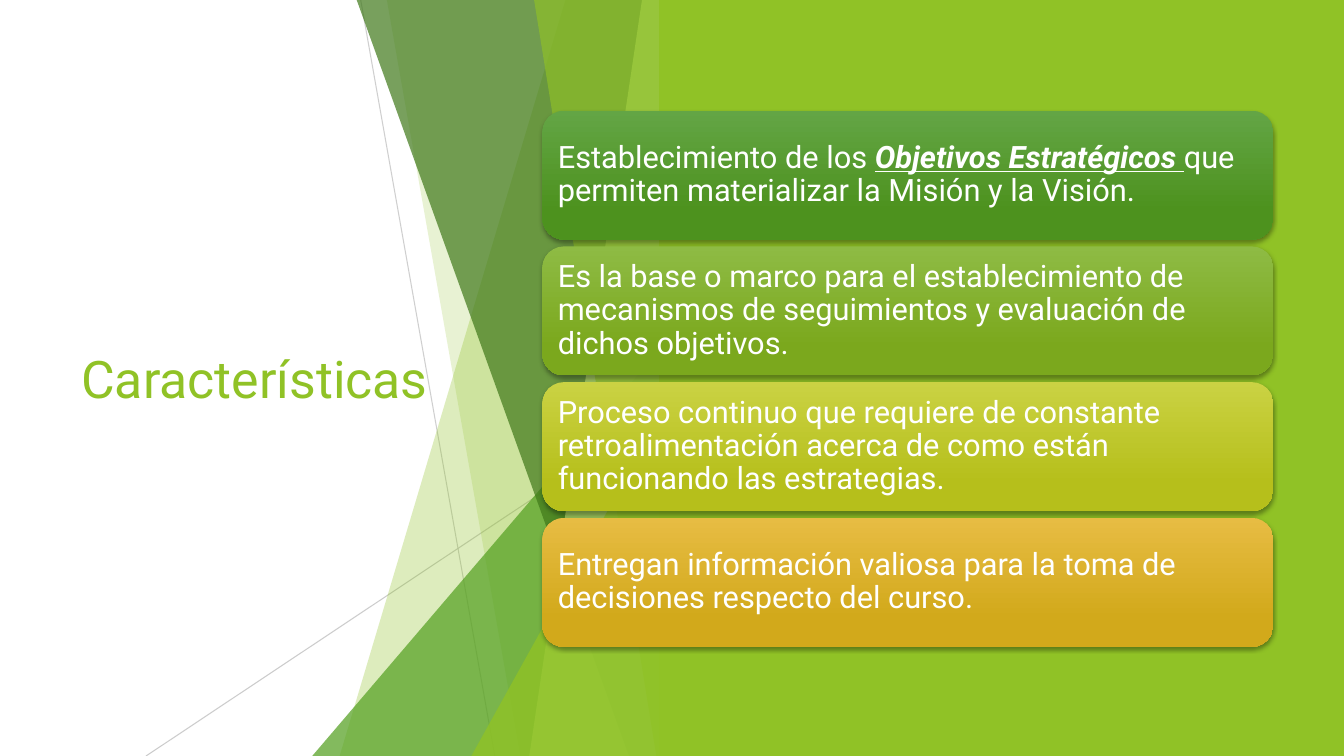
from lxml.etree import SubElement
from pptx import Presentation
from pptx.dml.color import RGBColor
from pptx.enum.shapes import MSO_CONNECTOR, MSO_SHAPE
from pptx.enum.text import MSO_ANCHOR, PP_ALIGN
from pptx.oxml.ns import qn
from pptx.util import Cm, Pt

WHITE = RGBColor(0xFF, 0xFF, 0xFF)
GRAY = RGBColor(0xBF, 0xBF, 0xBF)
LIME = RGBColor(0x90, 0xC2, 0x26)
GREEN = RGBColor(0x54, 0xA0, 0x21)
DARK = RGBColor(0x3F, 0x78, 0x19)
PALE = RGBColor(0xC0, 0xE4, 0x74)
WIDTH, HEIGHT = 33.87, 19.05
EDGE = 16.92  # right side shared by all facets


def set_alpha(parent, percent):
    """Make the solid colour found under parent partly transparent."""
    color = next(parent.iter(qn("a:srgbClr")))
    SubElement(color, qn("a:alpha"), val=str(percent * 1000))


def add_run(p, text, **font):
    r = p.add_run()
    r.text = text
    color = font.pop("color")
    r.font.color.rgb = color
    for name, value in font.items():
        setattr(r.font, name, value)


prs = Presentation()
prs.slide_width, prs.slide_height = Cm(WIDTH), Cm(HEIGHT)
s = prs.slides.add_slide(prs.slide_layouts[6])

# Title
title = s.shapes.add_textbox(Cm(1.8), Cm(3.84), Cm(9.86), Cm(11.38))
tf = title.text_frame
tf.word_wrap = True
tf.vertical_anchor = MSO_ANCHOR.MIDDLE
add_run(tf.paragraphs[0], "Características", name="Roboto", size=Pt(37), color=LIME)

# Thin lines behind the facets
for x1, y1, x2, alpha in [(9.09, 0, 12.47, 75), (EDGE, 10.24, 3.68, 80)]:
    line = s.shapes.add_connector(
        MSO_CONNECTOR.STRAIGHT, Cm(x1), Cm(y1), Cm(x2), Cm(HEIGHT))
    line.line.color.rgb = GRAY
    line.line.width = Pt(0.75)
    props = line._element.spPr
    set_alpha(props, alpha)
    SubElement(props, qn("a:effectLst"))

# Facets: x and y of the upper corner, x of the lower left corner, colour, opacity
# A facet that starts on the right edge is a triangle
facets = [
    (14.25, 0, 8.56, LIME, 30),
    (9.75, 0, 13.11, LIME, 20),
    (EDGE, 8.46, 7.87, GREEN, 72),
    (8.99, 0, 15.85, DARK, 70),
    (16.18, 0, 13.34, PALE, 70),
    (13.46, 0, 16.54, LIME, 65),
    (EDGE, 9.98, 11.88, LIME, 80),
]
for top_x, top_y, bottom_x, color, alpha in facets:
    if top_x == EDGE:
        sp = s.shapes.add_shape(
            MSO_SHAPE.ISOSCELES_TRIANGLE, Cm(bottom_x), Cm(top_y),
            Cm(EDGE - bottom_x), Cm(HEIGHT - top_y))
        sp.adjustments[0] = 1
    else:
        builder = s.shapes.build_freeform(Cm(top_x), Cm(top_y))
        builder.add_line_segments([
            (Cm(EDGE), Cm(top_y)), (Cm(EDGE), Cm(HEIGHT)), (Cm(bottom_x), Cm(HEIGHT))])
        sp = builder.convert_to_shape()
    sp.shadow.inherit = False
    sp.fill.solid()
    sp.fill.fore_color.rgb = color
    sp.line.fill.background()
    set_alpha(sp._element.spPr, alpha)

# Right panel
panel = s.shapes.add_shape(
    MSO_SHAPE.RECTANGLE, Cm(16.61), Cm(0), Cm(WIDTH - 16.61), Cm(HEIGHT))
panel.shadow.inherit = False
panel.fill.solid()
panel.fill.fore_color.rgb = LIME
panel.line.fill.background()

# Cards: upper and lower gradient colour, runs of text with emphasis
cards = [
    (RGBColor(0x63, 0xA5, 0x45), RGBColor(0x4D, 0x92, 0x1E),
     [("Establecimiento de los ", False), ("Objetivos Estratégicos ", True),
      ("que permiten materializar la Misión y la Visión.", False)]),
    (RGBColor(0x8E, 0xBB, 0x44), RGBColor(0x7B, 0xA8, 0x1D),
     [("Es la base o marco para el establecimiento de mecanismos de "
       "seguimientos y evaluación de dichos objetivos.", False)]),
    (RGBColor(0xCA, 0xD2, 0x43), RGBColor(0xB6, 0xBF, 0x1B),
     [("Proceso continuo que requiere de constante retroalimentación "
       "acerca de como están funcionando las estrategias.", False)]),
    (RGBColor(0xE7, 0xBC, 0x43), RGBColor(0xD2, 0xA9, 0x1B),
     [("Entregan información valiosa para la toma de decisiones "
       "respecto del curso.", False)]),
]
for i, (upper, lower, runs) in enumerate(cards):
    card = s.shapes.add_shape(
        MSO_SHAPE.ROUNDED_RECTANGLE, Cm(13.67), Cm(2.79 + 3.42 * i), Cm(18.42), Cm(3.25))
    card.line.fill.background()
    card.fill.gradient()
    card.fill.gradient_angle = 270
    for stop, color, position in zip(card.fill.gradient_stops, (upper, lower), (0, 0.78)):
        stop.color.rgb = color
        stop.position = position

    card.shadow.inherit = False
    effects = card._element.spPr.find(qn("a:effectLst"))
    shadow = SubElement(
        effects, qn("a:outerShdw"), blurRad=str(Pt(3)), dist=str(Pt(2)),
        dir="5400000", algn="ctr", rotWithShape="0")
    SubElement(shadow, qn("a:srgbClr"), val="000000")
    set_alpha(shadow, 35)

    tf = card.text_frame
    frame = dict.fromkeys(
        ("margin_left", "margin_top", "margin_right", "margin_bottom"), Cm(0.23))
    frame.update(word_wrap=True, vertical_anchor=MSO_ANCHOR.MIDDLE)
    for name, value in frame.items():
        setattr(tf, name, value)
    p = tf.paragraphs[0]
    p.alignment = PP_ALIGN.LEFT
    p.line_spacing = 0.9
    for text, strong in runs:
        add_run(p, text, name="Roboto", size=Pt(22), color=WHITE,
                bold=strong, italic=strong, underline=strong)

prs.save("out.pptx")
